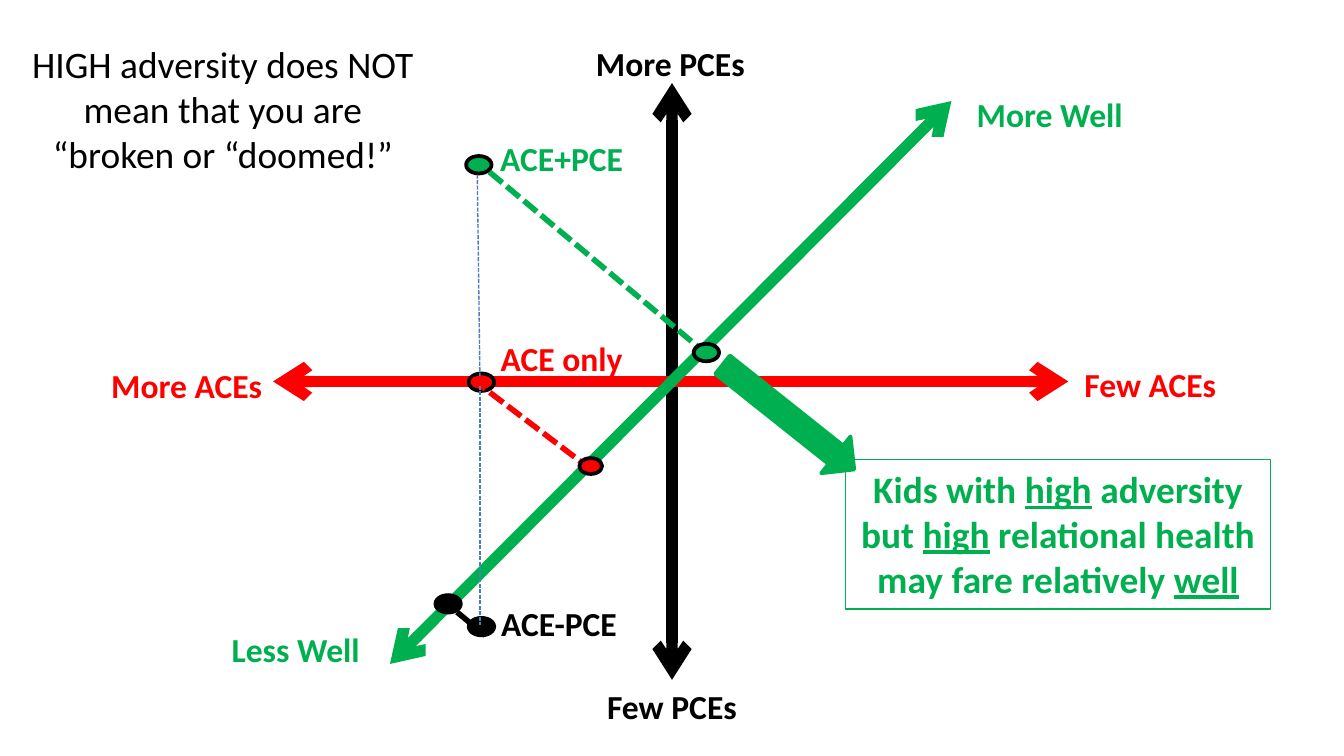
from lxml.etree import SubElement
from pptx import Presentation
from pptx.dml.color import RGBColor
from pptx.enum.dml import MSO_LINE
from pptx.enum.shapes import MSO_CONNECTOR, MSO_SHAPE
from pptx.enum.text import MSO_ANCHOR, MSO_AUTO_SIZE, PP_ALIGN
from pptx.oxml.ns import qn
from pptx.util import Cm, Pt

BLACK = RGBColor(0x00, 0x00, 0x00)
RED = RGBColor(0xFF, 0x00, 0x00)
GREEN = RGBColor(0x00, 0xB0, 0x50)
BLUE = RGBColor(0x4B, 0x7E, 0xBC)
FONT = "Calibri"


def add_line(slide, start, end, color, width):
    line = slide.shapes.add_connector(
        MSO_CONNECTOR.STRAIGHT, *(Cm(v) for v in (*start, *end)))
    line.line.color.rgb = color
    line.line.width = Pt(width)
    SubElement(line._element.spPr, qn("a:effectLst"))
    return line


def add_axis(slide, start, end, color):
    axis = add_line(slide, start, end, color, 6)
    outline = axis.line._get_or_add_ln()
    for tag in ("a:headEnd", "a:tailEnd"):
        SubElement(outline, qn(tag), type="arrow")


def add_dashes(slide, start, end, color, width=3):
    add_line(slide, start, end, color, width).line.dash_style = MSO_LINE.SQUARE_DOT


def add_solid(slide, kind, box, fill, outline):
    solid = slide.shapes.add_shape(kind, *(Cm(v) for v in box))
    solid.shadow.inherit = False
    solid.fill.solid()
    solid.fill.fore_color.rgb = fill
    solid.line.color.rgb = outline
    solid.line.width = Pt(2)
    return solid


def add_dot(slide, left, top, color, width=0.48, height=0.33):
    add_solid(slide, MSO_SHAPE.OVAL, (left, top, width, height), color, BLACK)


def write(frame, parts, size, color, bold):
    frame.word_wrap = True
    frame.auto_size = MSO_AUTO_SIZE.SHAPE_TO_FIT_TEXT
    frame.vertical_anchor = MSO_ANCHOR.TOP
    paragraph = frame.paragraphs[0]
    paragraph.alignment = PP_ALIGN.CENTER
    for text, underlined in parts:
        run = paragraph.add_run()
        run.text = text
        run.font.name = FONT
        run.font.size = Pt(size)
        run.font.bold = bold
        run.font.underline = underlined
        run.font.color.rgb = color


def add_label(slide, text, box, color, size=18, bold=True):
    label = slide.shapes.add_textbox(*(Cm(v) for v in box))
    write(label.text_frame, [(text, False)], size, color, bold)


def add_conclusion(slide):
    conclusion = slide.shapes.add_shape(
        MSO_SHAPE.RECTANGLE, Cm(15.98), Cm(8.69), Cm(8.03), Cm(2.82))
    conclusion.shadow.inherit = False
    conclusion.fill.background()
    conclusion.line.color.rgb = GREEN
    conclusion.line.width = Pt(0.75)
    parts = [("Kids with ", False), ("high", True), (" adversity but ", False),
             ("high", True), (" relational health may fare relatively ", False),
             ("well", True)]
    write(conclusion.text_frame, parts, 20, GREEN, True)


def main():
    deck = Presentation()
    deck.slide_width, deck.slide_height = Cm(25.4), Cm(14.29)
    slide = deck.slides.add_slide(deck.slide_layouts[6])

    add_axis(slide, (12.7, 1.57), (12.7, 12.85), BLACK)
    add_axis(slide, (5.16, 7.21), (20.19, 7.21), RED)
    add_axis(slide, (17.98, 1.91), (7.37, 12.55), GREEN)

    for text, left, top, color in [
        ("Few PCEs", 10.44, 12.85, BLACK),
        ("More PCEs", 10.41, 0.69, BLACK),
        ("Few ACEs", 19.48, 6.76, RED),
        ("More ACEs", 1.27, 6.78, RED),
        ("Less Well", 3.33, 11.76, GREEN),
        ("More Well", 17.58, 1.65, GREEN),
    ]:
        add_label(slide, text, (left, top, 4.52, 1.02), color)

    for text, left, top, color in [
        ("ACE only", 9.09, 6.27, RED),
        ("ACE-PCE", 9.04, 11.28, BLACK),
        ("ACE+PCE", 9.09, 2.49, GREEN),
    ]:
        add_label(slide, text, (left, top, 3.05, 1.02), color)

    add_dot(slide, 8.81, 2.95, GREEN)
    add_dashes(slide, (9.25, 3.25), (13.34, 6.68), GREEN)
    add_dot(slide, 13.11, 6.5, GREEN)

    add_dot(slide, 8.86, 7.06, RED)
    add_dashes(slide, (8.92, 7.16), (11.02, 8.76), RED)
    add_dot(slide, 10.95, 8.66, RED, 0.43, 0.3)

    add_dot(slide, 8.86, 11.68, BLACK)
    add_dashes(slide, (8.31, 11.3), (9.17, 12.01), BLACK)
    add_dot(slide, 8.23, 11.25, BLACK)

    add_dashes(slide, (9.07, 7.29), (9.07, 11.81), BLUE, 0.75)
    add_dashes(slide, (9.02, 3.3), (9.07, 7.11), BLUE, 0.75)

    add_label(slide, "HIGH adversity does NOT mean that you are “broken or “doomed!”",
              (0.2, 0.66, 8.03, 2.82), BLACK, 20, False)
    add_conclusion(slide)
    pointer = add_solid(slide, MSO_SHAPE.RIGHT_ARROW, (13.31, 7.44, 3.18, 0.89),
                        GREEN, GREEN)
    pointer.rotation = 38.5

    deck.save("out.pptx")


if __name__ == "__main__":
    main()
